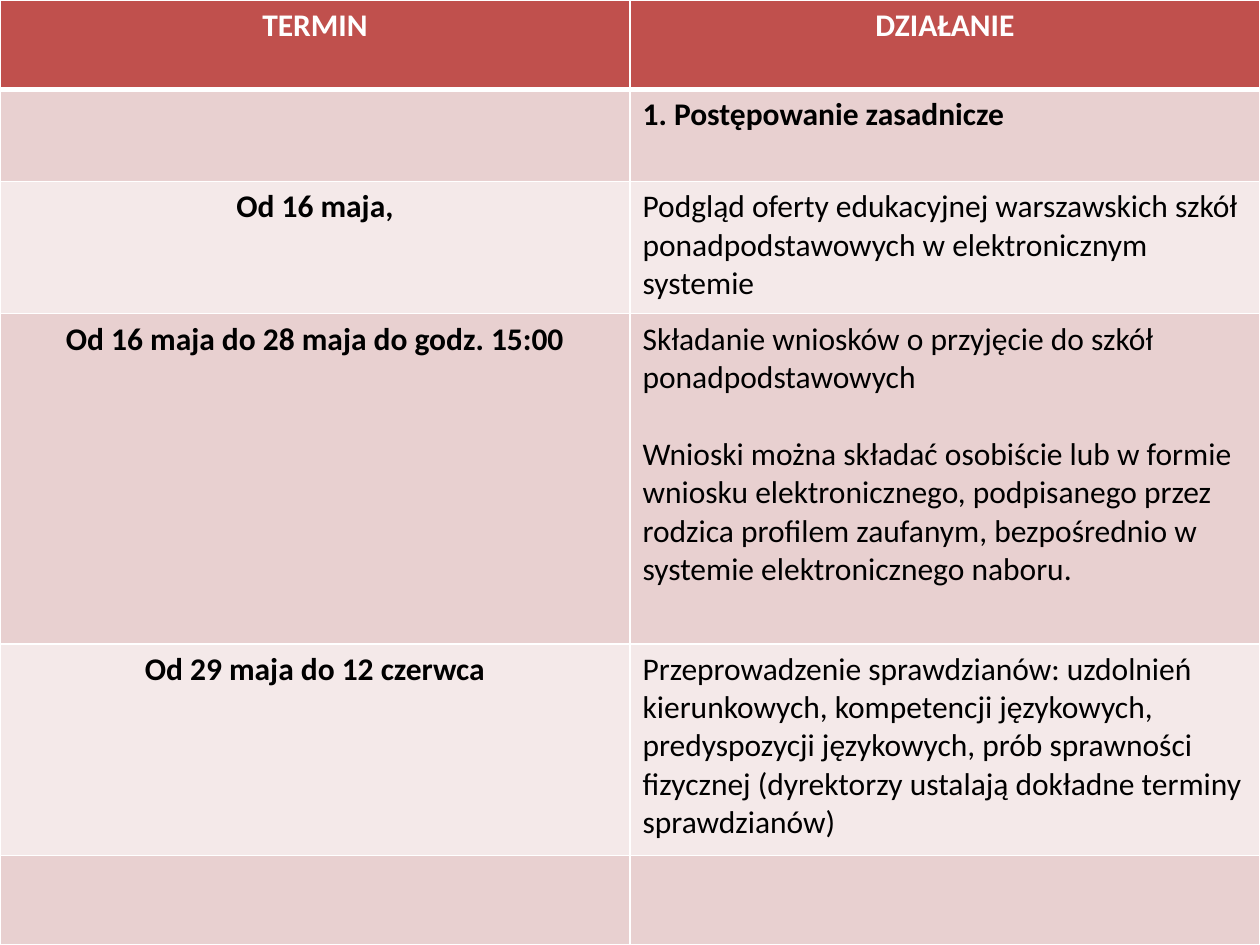
"""Build a slide with the timetable of secondary school admissions."""
from dataclasses import dataclass

from lxml.etree import SubElement
from pptx import Presentation
from pptx.dml.color import RGBColor
from pptx.enum.text import PP_ALIGN as Align
from pptx.oxml.ns import qn
from pptx.table import _Cell as Cell
from pptx.util import Inches, Pt

HEADER_FILL = "C0504D"
BAND_FILLS = ("F4E9E9", "E8D0D0")
WHITE = "FFFFFF"
BLACK = "000000"
LINE_GAP = 22


@dataclass
class Stage:
    height: float
    term: str = ""
    actions: tuple[str, ...] = ()
    bold_action: bool = False


STAGES = (
    Stage(0.73, actions=("1. Postępowanie zasadnicze",), bold_action=True),
    Stage(1.05, "Od 16 maja,", (
        "Podgląd oferty edukacyjnej warszawskich szkół ponadpodstawowych "
        "w elektronicznym systemie",
    )),
    Stage(2.62, "Od 16 maja do 28 maja do godz. 15:00", (
        "Składanie wniosków o przyjęcie do szkół ponadpodstawowych",
        "Wnioski można składać osobiście lub w formie wniosku elektronicznego, "
        "podpisanego przez rodzica profilem zaufanym, bezpośrednio w systemie "
        "elektronicznego naboru.",
    )),
    Stage(1.68, "Od 29 maja do 12 czerwca", (
        "Przeprowadzenie sprawdzianów: uzdolnień kierunkowych, kompetencji "
        "językowych, predyspozycji językowych, prób sprawności fizycznej "
        "(dyrektorzy ustalają dokładne terminy sprawdzianów)",
    )),
    Stage(0.71),
)
HEADER_HEIGHT = 0.71


def rgb(value: str) -> RGBColor:
    return RGBColor.from_string(value)


def write_text(cell: Cell, *texts: str, color: str = BLACK, bold: bool = False,
               align: Align = Align.LEFT, size: float = 18, font: str = "Calibri") -> None:
    frame = cell.text_frame
    for index, text in enumerate(texts):
        paragraph = frame.add_paragraph() if index else frame.paragraphs[0]
        paragraph.alignment = align
        if index:
            paragraph.space_before = Pt(LINE_GAP)
        run = paragraph.add_run()
        run.text = text
        run.font.name = font
        run.font.size = Pt(size)
        run.font.bold = bold
        run.font.color.rgb = rgb(color)


def style_cell(cell: Cell, fill: str, top: float = 1, bottom: float = 1) -> None:
    properties = cell._tc.get_or_add_tcPr()
    for side, width in (("L", 1), ("R", 1), ("T", top), ("B", bottom)):
        line = SubElement(properties, qn(f"a:ln{side}"), w=str(Pt(width)))
        solid = SubElement(line, qn("a:solidFill"))
        SubElement(solid, qn("a:srgbClr"), val=WHITE)
    cell.fill.solid()
    cell.fill.fore_color.rgb = rgb(fill)


def main() -> None:
    presentation = Presentation()
    presentation.slide_width = Inches(10)
    presentation.slide_height = Inches(7.5)
    slide = presentation.slides.add_slide(presentation.slide_layouts[6])
    table = slide.shapes.add_table(
        len(STAGES) + 1, 2, 0, 0, Inches(10), Inches(7.5)).table

    table.rows[0].height = Inches(HEADER_HEIGHT)
    for cell, heading in zip(table.rows[0].cells, ("TERMIN", "DZIAŁANIE")):
        style_cell(cell, HEADER_FILL, bottom=3)
        write_text(cell, heading, color=WHITE, bold=True, align=Align.CENTER)

    for index, stage in enumerate(STAGES, start=1):
        row = table.rows[index]
        row.height = Inches(stage.height)
        for cell in row.cells:
            style_cell(cell, BAND_FILLS[index % 2], top=3 if index == 1 else 1)
        term_cell, action_cell = row.cells
        if stage.term:
            write_text(term_cell, stage.term, bold=True, align=Align.CENTER)
        write_text(action_cell, *stage.actions, bold=stage.bold_action)

    presentation.save("out.pptx")


if __name__ == "__main__":
    main()
